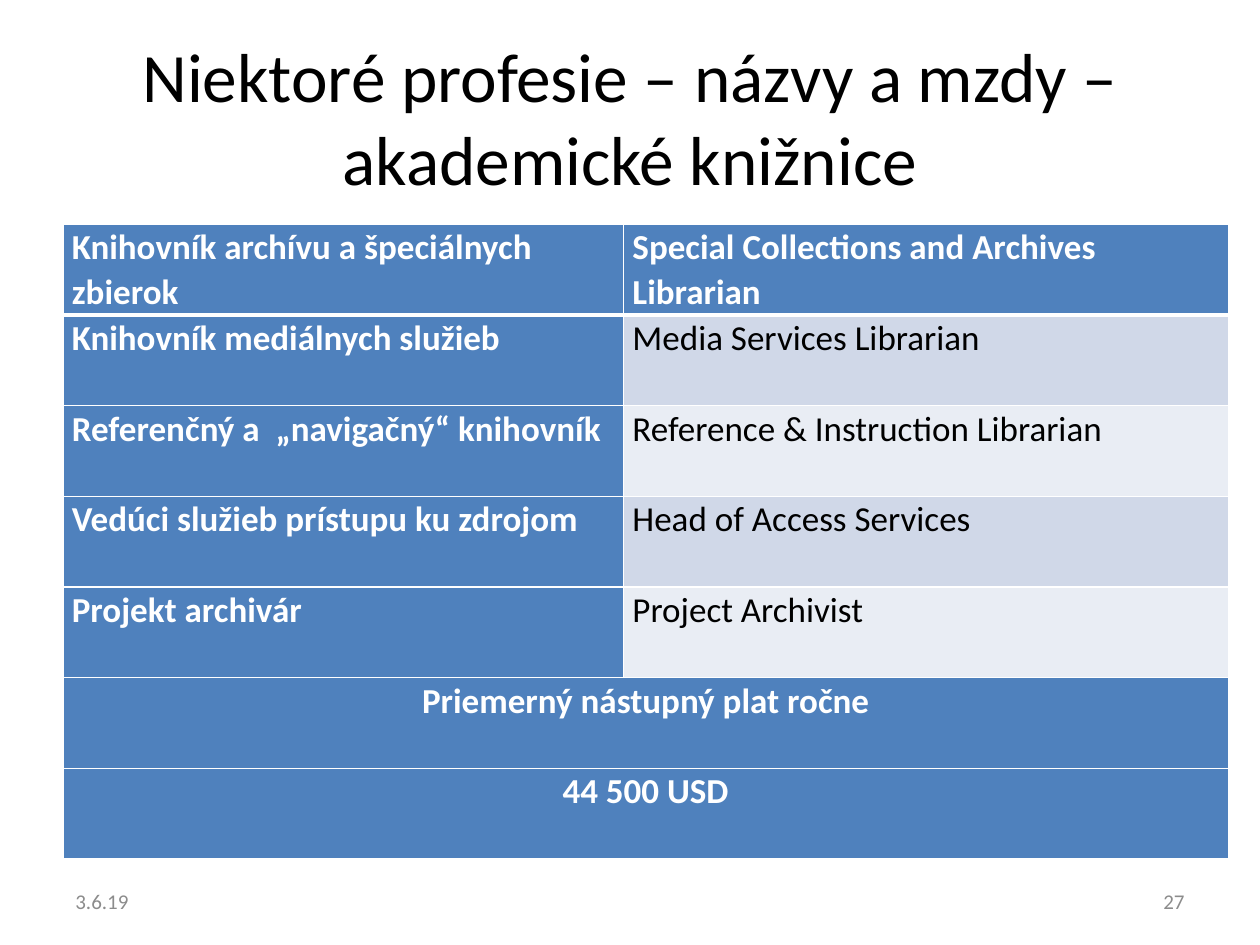
import pptx
import pptx.dml.color
import pptx.enum.text
import pptx.oxml
import pptx.oxml.ns
import pptx.util

Inches = pptx.util.Inches
Pt = pptx.util.Pt
RGBColor = pptx.dml.color.RGBColor
ALIGN = pptx.enum.text.PP_ALIGN
ANCHOR = pptx.enum.text.MSO_ANCHOR

WHITE = RGBColor(0xFF, 0xFF, 0xFF)
BLACK = RGBColor(0x00, 0x00, 0x00)
GRAY = RGBColor(0x8C, 0x8C, 0x8C)
BLUE = RGBColor(0x4F, 0x81, 0xBD)
BAND_DARK = RGBColor(0xD0, 0xD8, 0xE8)
BAND_LIGHT = RGBColor(0xE9, 0xED, 0xF4)

PROFESSIONS = [
    ("Knihovník archívu a špeciálnych zbierok", "Special Collections and Archives Librarian"),
    ("Knihovník mediálnych služieb", "Media Services Librarian"),
    ("Referenčný a  „navigačný“ knihovník", "Reference & Instruction Librarian"),
    ("Vedúci služieb prístupu ku zdrojom", "Head of Access Services"),
    ("Projekt archivár", "Project Archivist"),
]
SALARY_ROWS = ["Priemerný nástupný plat ročne", "44 500 USD"]


def write_text(frame, text, size=20, color=BLACK, bold=False,
               align=ALIGN.LEFT, spacing=None, font="Calibri"):
    paragraph = frame.paragraphs[0]
    paragraph.alignment = align
    if spacing:
        paragraph.line_spacing = spacing
    run = paragraph.add_run()
    run.text = text
    run.font.name = font
    run.font.size = Pt(size)
    run.font.bold = bold
    run.font.color.rgb = color


class SlideBuilder:
    cell_margin = Inches(0.07)
    cell_spacing = 1.05
    border_color = WHITE

    def __init__(self, presentation):
        self.slide = presentation.slides.add_slide(presentation.slide_layouts[6])

    def text(self, text, left, top, width, height, **text_format):
        shape = self.slide.shapes.add_textbox(
            Inches(left), Inches(top), Inches(width), Inches(height))
        frame = shape.text_frame
        frame.word_wrap = True
        frame.vertical_anchor = ANCHOR.MIDDLE
        write_text(frame, text, **text_format)

    def table(self, left, top, column_widths, row_height, row_count):
        shape = self.slide.shapes.add_table(
            row_count, len(column_widths), Inches(left), Inches(top),
            Inches(sum(column_widths)), Inches(row_height * row_count))
        table = shape.table
        table.first_row = False
        table.horz_banding = False
        for column, width in zip(table.columns, column_widths):
            column.width = Inches(width)
        for row in table.rows:
            row.height = Inches(row_height)
        return table

    def cell(self, cell, text, fill=BLUE, color=WHITE, bold=True,
             align=ALIGN.LEFT, top_border=1, bottom_border=1):
        cell.margin_left = cell.margin_right = self.cell_margin
        cell.margin_top = cell.margin_bottom = 0
        self.borders(cell, L=1, R=1, T=top_border, B=bottom_border)
        cell.fill.solid()
        cell.fill.fore_color.rgb = fill
        if text:
            write_text(cell.text_frame, text, color=color, bold=bold,
                       align=align, spacing=self.cell_spacing)

    def borders(self, cell, **widths):
        properties = cell._tc.get_or_add_tcPr()
        for side, width in widths.items():
            properties.append(pptx.oxml.parse_xml(
                f'<a:ln{side} {pptx.oxml.ns.nsdecls("a")} w="{Pt(width)}">'
                f'<a:solidFill><a:srgbClr val="{self.border_color}"/></a:solidFill>'
                f'</a:ln{side}>'))


def main():
    presentation = pptx.Presentation()
    presentation.slide_width = Inches(10)
    presentation.slide_height = Inches(7.5)
    builder = SlideBuilder(presentation)

    builder.text("Niektoré profesie – názvy a mzdy – akademické knižnice",
                 0.5, 0.3, 9, 1.25, size=39.6, align=ALIGN.CENTER)

    table = builder.table(0.5, 1.78, [4.45, 4.8], 0.72,
                          len(PROFESSIONS) + len(SALARY_ROWS))
    for row, (slovak, english) in enumerate(PROFESSIONS):
        edges = {"top_border": 3 if row == 1 else 1,
                 "bottom_border": 3 if row == 0 else 1}
        builder.cell(table.cell(row, 0), slovak, **edges)
        if row == 0:
            builder.cell(table.cell(row, 1), english, **edges)
        else:
            builder.cell(table.cell(row, 1), english, color=BLACK, bold=False,
                         fill=BAND_DARK if row % 2 else BAND_LIGHT, **edges)

    for row, text in enumerate(SALARY_ROWS, start=len(PROFESSIONS)):
        table.cell(row, 0).merge(table.cell(row, 1))
        builder.cell(table.cell(row, 0), text, align=ALIGN.CENTER)
        builder.cell(table.cell(row, 1), "")

    builder.text("3.6.19", 0.5, 6.95, 2.33, 0.4, size=12, color=GRAY)
    builder.text("27", 7.17, 6.95, 2.33, 0.4, size=12, color=GRAY, align=ALIGN.RIGHT)

    presentation.save("out.pptx")


if __name__ == "__main__":
    main()
